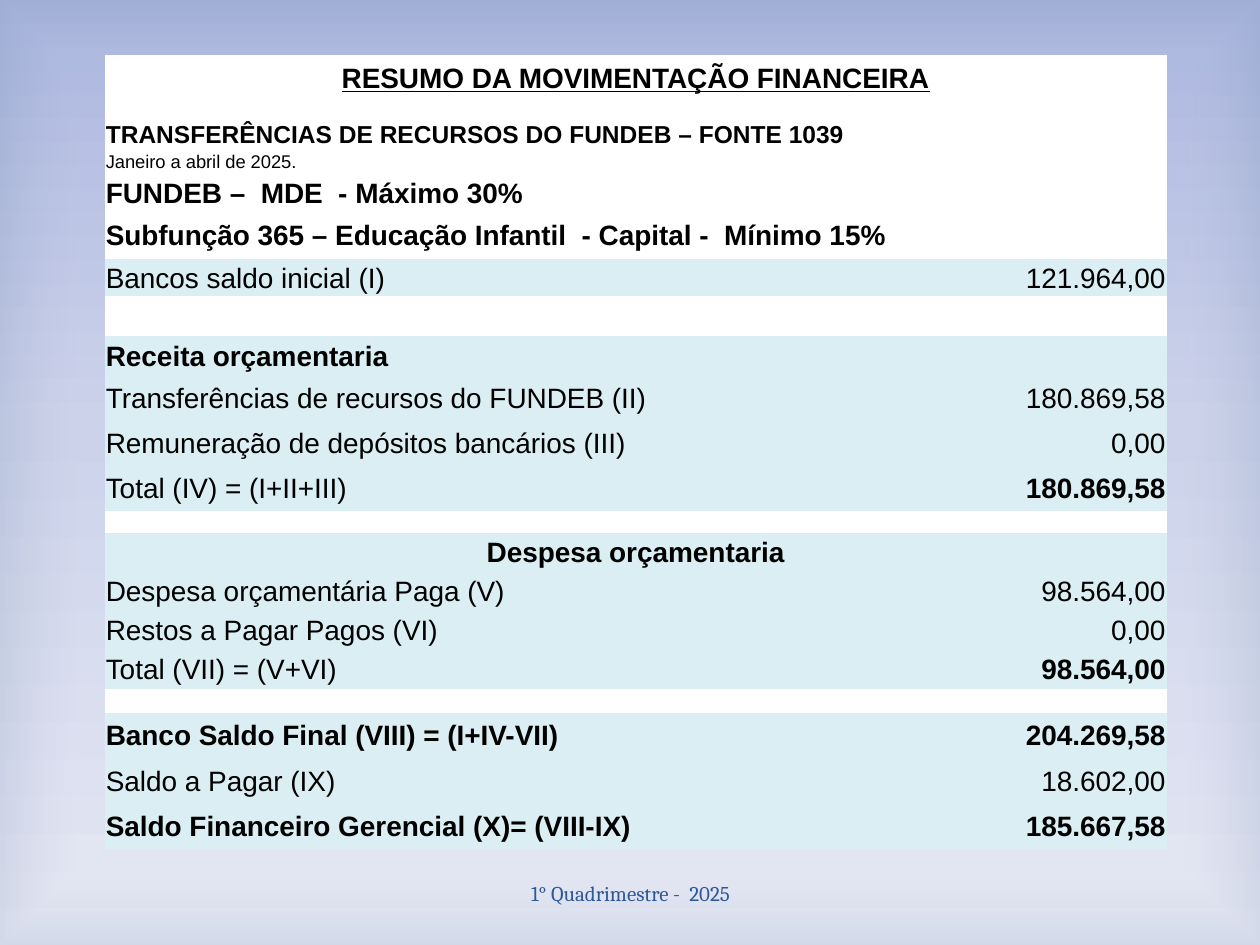
import dataclasses
import typing

import lxml.etree
import pptx
import pptx.dml.color
import pptx.enum.shapes
import pptx.enum.text
import pptx.oxml.ns
import pptx.util

Inches = pptx.util.Inches
Pt = pptx.util.Pt
Align = pptx.enum.text.PP_ALIGN
Anchor = pptx.enum.text.MSO_ANCHOR
qn = pptx.oxml.ns.qn


@dataclasses.dataclass(frozen=True)
class Theme:
    body_font: str = "Arial"
    footer_font: str = "Cambria"
    text: str = "000000"
    footer: str = "2F5897"
    white: str = "FFFFFF"
    band: str = "DAEEF3"
    body_size: float = 16
    heading_size: float = 14
    period_size: float = 10.5
    footer_size: float = 12
    gap_size: float = 6


THEME = Theme()
NO_GRID_STYLE = "{2D5ABB26-0587-4C30-8999-92F81FD0307C}"
COLUMN_WIDTHS = (6.5, 1.93)


class Stop(typing.NamedTuple):
    position: int
    color: str
    alpha: int = 100


class Row(typing.NamedTuple):
    height: float
    label: str = ""
    amount: str = ""
    fill: str = THEME.band
    size: float = THEME.body_size
    bold: bool = False
    amount_bold: bool = False
    underline: bool = False
    align: Align = Align.LEFT
    edge: str = ""


def gap(height: float) -> Row:
    return Row(height, fill=THEME.white, size=THEME.gap_size)


ROWS = (
    Row(0.36, "RESUMO DA MOVIMENTAÇÃO FINANCEIRA", fill=THEME.white, bold=True, underline=True, align=Align.CENTER),
    gap(0.14),
    Row(0.25, "TRANSFERÊNCIAS DE RECURSOS DO FUNDEB – FONTE 1039", fill=THEME.white, size=THEME.heading_size, bold=True),
    Row(0.19, "Janeiro a abril de 2025.", fill=THEME.white, size=THEME.period_size),
    Row(0.31, "FUNDEB –  MDE  - Máximo 30%", fill=THEME.white, bold=True),
    Row(0.36, "Subfunção 365 – Educação Infantil  - Capital -  Mínimo 15%", fill=THEME.white, bold=True, edge="a:lnB"),
    Row(0.31, "Bancos saldo inicial (I)", "121.964,00", edge="a:lnT"),
    gap(0.31),
    Row(0.31, "Receita orçamentaria", bold=True),
    Row(0.36, "Transferências de recursos do FUNDEB (II)", "180.869,58"),
    Row(0.36, "Remuneração de depósitos bancários (III)", "0,00"),
    Row(0.36, "Total (IV) = (I+II+III)", "180.869,58", amount_bold=True),
    gap(0.17),
    Row(0.31, "Despesa orçamentaria", bold=True, align=Align.CENTER),
    Row(0.31, "Despesa orçamentária Paga (V)", "98.564,00"),
    Row(0.31, "Restos a Pagar Pagos (VI)", "0,00"),
    Row(0.31, "Total (VII) = (V+VI)", "98.564,00", amount_bold=True),
    gap(0.19),
    Row(0.36, "Banco Saldo Final (VIII) = (I+IV-VII)", "204.269,58", bold=True, amount_bold=True),
    Row(0.36, "Saldo a Pagar (IX)", "18.602,00"),
    Row(0.36, "Saldo Financeiro Gerencial (X)= (VIII-IX)", "185.667,58", bold=True, amount_bold=True),
)


def rgb(color: str) -> pptx.dml.color.RGBColor:
    return pptx.dml.color.RGBColor.from_string(color)


def add_node(parent: typing.Any, tag: str, **attributes: object) -> typing.Any:
    return lxml.etree.SubElement(parent, qn(tag), {key: str(value) for key, value in attributes.items()})


def set_gradient(owner: typing.Any, stops: tuple[Stop, ...], centred: bool = False) -> None:
    gradient = owner.find(".//" + qn("a:gradFill"))
    for child in list(gradient):
        gradient.remove(child)
    stop_list = add_node(gradient, "a:gsLst")
    for stop in stops:
        node = add_node(stop_list, "a:gs", pos=stop.position * 1000)
        color = add_node(node, "a:srgbClr", val=stop.color)
        if stop.alpha < 100:
            add_node(color, "a:alpha", val=stop.alpha * 1000)
    if centred:
        shade = add_node(gradient, "a:path", path="rect")
        add_node(shade, "a:fillToRect", l=50000, t=50000, r=50000, b=50000)
    else:
        add_node(gradient, "a:lin", ang=90 * 60000, scaled=0)


def draw_background(slide: typing.Any, width: int, height: int) -> None:
    slide.background.fill.gradient()
    set_gradient(slide.background._cSld, (Stop(0, "A2AEDC"), Stop(45, "C6CDE8"), Stop(100, "E3E6F3")))
    vignette = slide.shapes.add_shape(pptx.enum.shapes.MSO_SHAPE.RECTANGLE, 0, 0, width, height)
    vignette.shadow.inherit = False
    vignette.line.fill.background()
    vignette.fill.gradient()
    set_gradient(vignette._element, (Stop(83, "FFFFFF", 11), Stop(100, "9BADC4", 23)), centred=True)


def style_span(span: typing.Any, font: str, size: float, color: str, bold: bool = False) -> None:
    span.font.name = font
    span.font.size = Pt(size)
    span.font.color.rgb = rgb(color)
    span.font.bold = bold


def fill_cell(cell: typing.Any, text: str, row: Row, align: Align, bold: bool) -> None:
    cell.fill.solid()
    cell.fill.fore_color.rgb = rgb(row.fill)
    cell.vertical_anchor = Anchor.MIDDLE
    cell.margin_left = cell.margin_top = cell.margin_right = Inches(0.01)
    cell.margin_bottom = 0
    para = cell.text_frame.paragraphs[0]
    para.text = text
    para.alignment = align
    for span in para.runs:
        style_span(span, THEME.body_font, row.size, THEME.text, bold)
        span.font.underline = row.underline
    if not text:
        add_node(para._p, "a:endParaRPr", sz=int(THEME.gap_size * 100))
    if row.edge:
        properties = cell._tc.get_or_add_tcPr()
        line = add_node(properties, row.edge, w=Pt(1))
        add_node(add_node(line, "a:solidFill"), "a:srgbClr", val=THEME.white)
        properties.insert(0, line)


def draw_summary(slide: typing.Any) -> None:
    height = sum(row.height for row in ROWS)
    frame = slide.shapes.add_table(
        len(ROWS), len(COLUMN_WIDTHS), Inches(0.83), Inches(0.44), Inches(sum(COLUMN_WIDTHS)), Inches(height)
    )
    table = frame.table
    table.first_row = table.horz_banding = False
    table._tbl.tblPr.find(qn("a:tableStyleId")).text = NO_GRID_STYLE
    for column, width in zip(table.columns, COLUMN_WIDTHS):
        column.width = Inches(width)
    for index, row in enumerate(ROWS):
        table.rows[index].height = Inches(row.height)
        label, amount = table.cell(index, 0), table.cell(index, 1)
        fill_cell(label, row.label, row, Align.JUSTIFY if row.amount else row.align, row.bold)
        fill_cell(amount, row.amount, row, Align.RIGHT, row.amount_bold)
        if not row.amount:
            label.merge(amount)


def draw_footer(slide: typing.Any) -> None:
    box = slide.shapes.add_textbox(Inches(3.42), Inches(6.89), Inches(3.17), Inches(0.4))
    box.text_frame.word_wrap = True
    box.text_frame.vertical_anchor = Anchor.MIDDLE
    para = box.text_frame.paragraphs[0]
    para.text = "1° Quadrimestre -  2025"
    para.alignment = Align.CENTER
    style_span(para.runs[0], THEME.footer_font, THEME.footer_size, THEME.footer)


def main() -> None:
    """Build the financial summary slide and save it."""
    deck = pptx.Presentation()
    deck.slide_width, deck.slide_height = Inches(10), Inches(7.5)
    slide = deck.slides.add_slide(deck.slide_layouts[6])
    draw_background(slide, deck.slide_width, deck.slide_height)
    draw_footer(slide)
    draw_summary(slide)
    deck.save("out.pptx")


if __name__ == "__main__":
    main()
